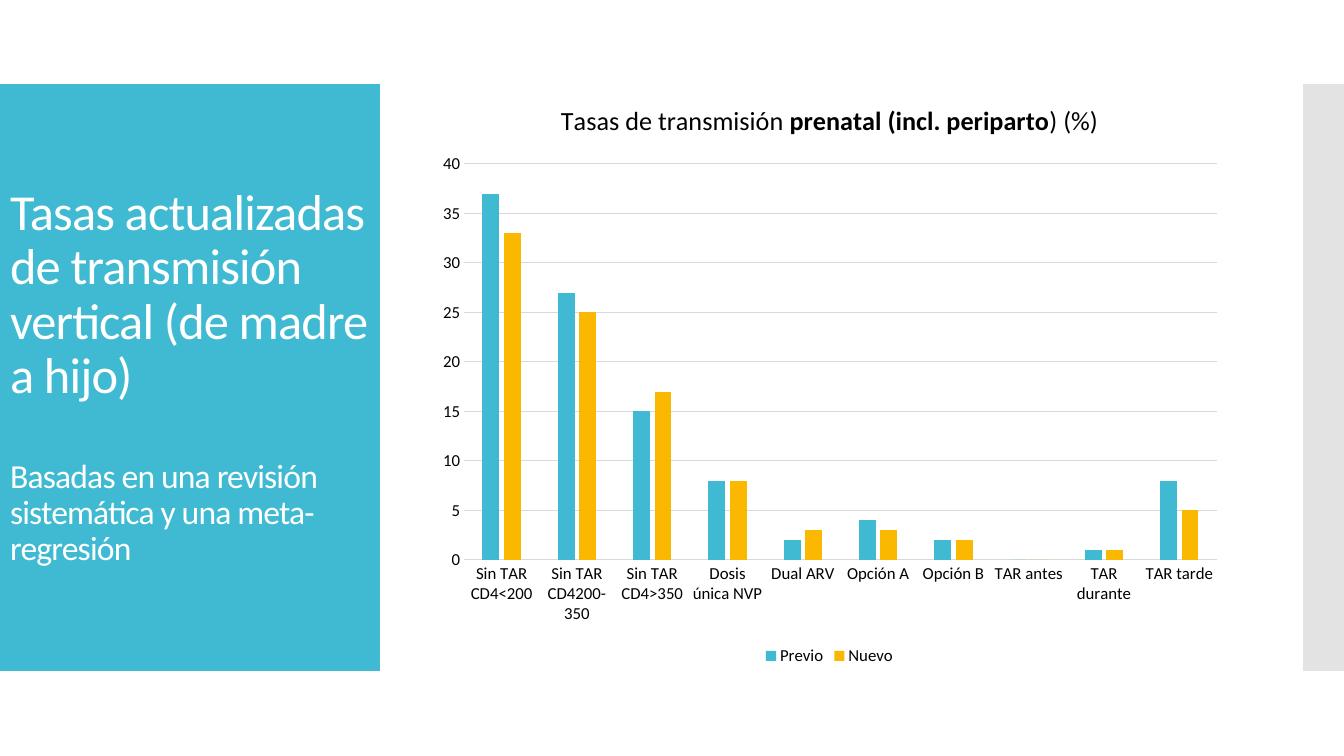
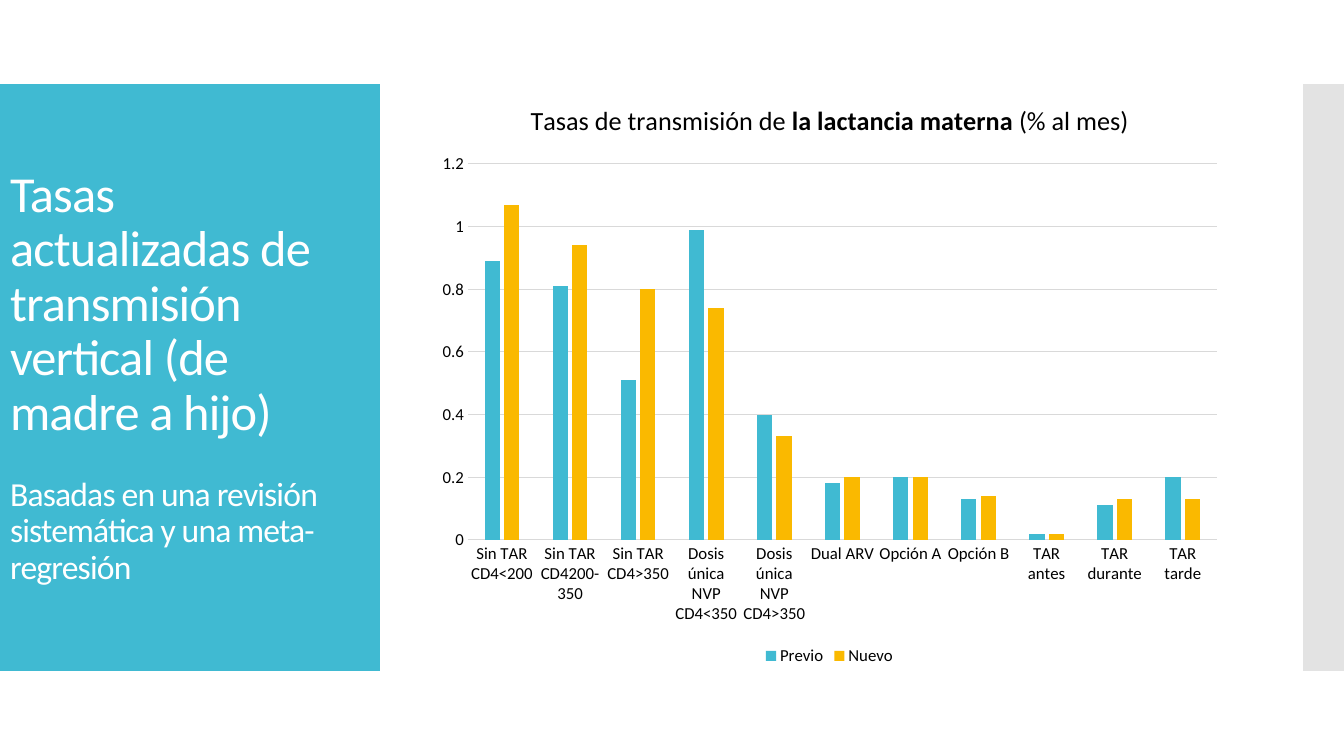
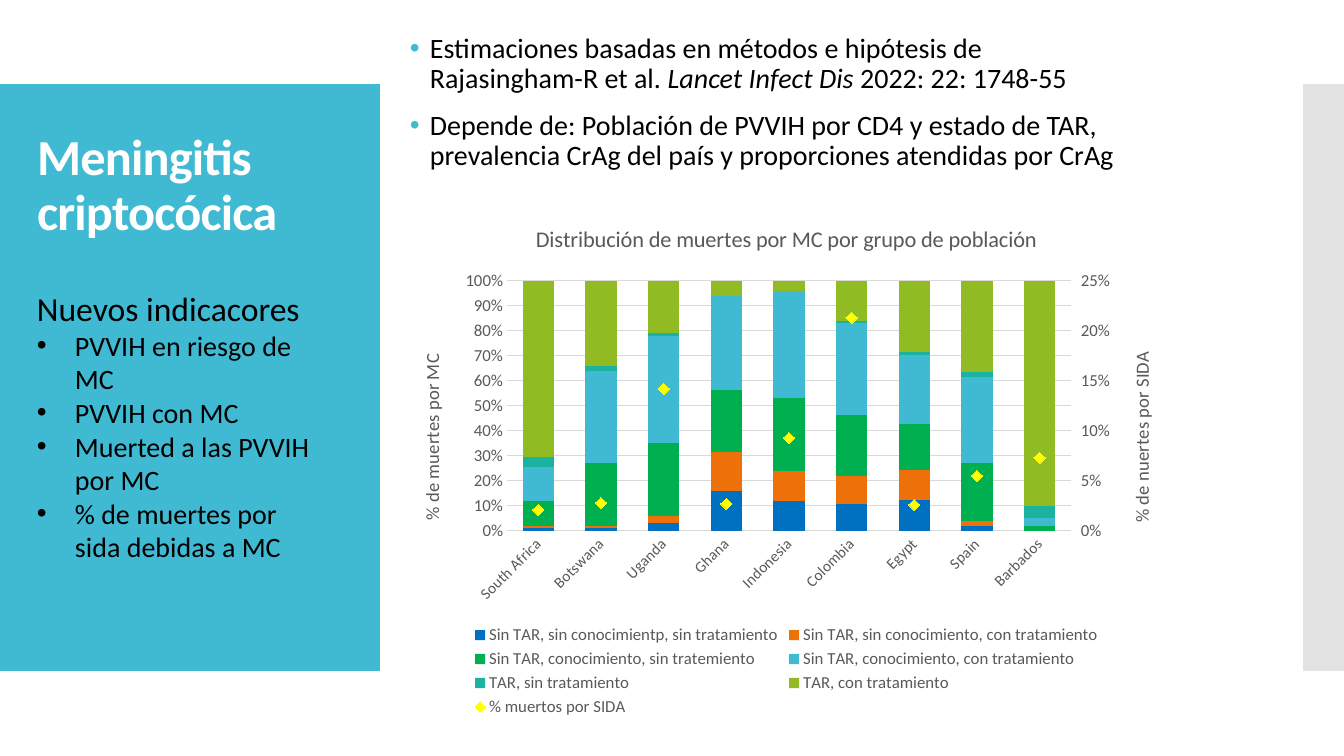
import pptx
import pptx.util
import pptx.oxml
import pptx.oxml.ns
import pptx.dml.color
import pptx.enum.text
import pptx.enum.shapes
import pptx.enum.chart
import pptx.chart.axis
import pptx.chart.data
from lxml import etree

RGB = pptx.dml.color.RGBColor
TEAL = RGB(0x40, 0xBA, 0xD2)
AMBER = RGB(0xFA, 0xB9, 0x00)
SIDE_GRAY = RGB(0xC8, 0xC8, 0xC8)
GRID_GRAY = RGB(0xD9, 0xD9, 0xD9)
TEXT_GRAY = RGB(0x59, 0x59, 0x59)
BLACK = RGB(0, 0, 0)
WHITE = RGB(0xFF, 0xFF, 0xFF)
YELLOW = RGB(0xFF, 0xFF, 0)
STACK_COLORS = [RGB(0x00, 0x70, 0xC0), RGB(0xEE, 0x70, 0x08), RGB(0x00, 0xB0, 0x50),
                TEAL, RGB(0x1A, 0xB3, 0x9F), RGB(0x90, 0xBB, 0x23)]
FONT = "Calibri"
SLIDE_W, SLIDE_H = 1344, 756
PANEL = (0, 84, 380, 587)
SIDE_BAR = (1303, 84, 41, 587)
RATE_CHART = (426, 83, 807, 587)

qn = pptx.oxml.ns.qn
Pt = pptx.util.Pt
CT = pptx.enum.chart.XL_CHART_TYPE
TICK = pptx.enum.chart.XL_TICK_MARK
ANCHOR = pptx.enum.text.MSO_ANCHOR


def px(n):
    return pptx.util.Emu(round(n * 12192000 / SLIDE_W))


def format_font(font, size, color=BLACK, bold=False, italic=False):
    font.name = FONT
    font.size = Pt(size)
    font.bold = bold
    font.italic = italic
    font.color.rgb = color


def add_text(p, text, size, spacing=None, **style):
    for i, line in enumerate(text.split("\n")):
        if i:
            p.add_line_break()
        r = p.add_run()
        r.text = line
        format_font(r.font, size, **style)
        if spacing is not None:
            r.font._element.set("spc", str(spacing))


def set_bullet(p, indent, color):
    pPr = p._p.get_or_add_pPr()
    pPr.set("marL", str(px(indent)))
    pPr.set("indent", str(-px(indent)))
    clr = etree.SubElement(pPr, qn("a:buClr"))
    etree.SubElement(clr, qn("a:srgbClr")).set("val", str(color))
    etree.SubElement(pPr, qn("a:buFont")).set("typeface", "Arial")
    etree.SubElement(pPr, qn("a:buChar")).set("char", "•")


def add_band(s, box, color, alpha=None):
    sp = s.shapes.add_shape(pptx.enum.shapes.MSO_SHAPE.RECTANGLE, *map(px, box))
    sp.shadow.inherit = False
    sp.fill.solid()
    sp.fill.fore_color.rgb = color
    sp.line.fill.background()
    if alpha:
        clr = sp.element.spPr.find(".//" + qn("a:srgbClr"))
        etree.SubElement(clr, qn("a:alpha")).set("val", str(alpha * 1000))
    s.shapes.element.insert(2, sp.element)


def add_slide(prs, title_box, title, subtitle=None, gap=0, bold=False):
    s = prs.slides.add_slide(prs.slide_layouts[5])
    add_band(s, PANEL, TEAL)
    add_band(s, SIDE_BAR, SIDE_GRAY, alpha=50)
    sp = s.shapes.title
    sp.left, sp.top, sp.width, sp.height = map(px, title_box)
    tf = sp.text_frame
    tf.word_wrap = True
    tf.auto_size = pptx.enum.text.MSO_AUTO_SIZE.NONE
    tf.vertical_anchor = ANCHOR.MIDDLE
    add_text(tf.paragraphs[0], title, 36, spacing=-60, color=WHITE, bold=bold)
    if subtitle:
        p = tf.add_paragraph()
        add_text(p, subtitle, 24, spacing=-60, color=WHITE)
        p.space_before = Pt(gap)
    for p in tf.paragraphs:
        p.alignment = pptx.enum.text.PP_ALIGN.LEFT
        p.line_spacing = 0.9
    return s


def add_text_box(s, box, anchor=ANCHOR.TOP):
    tf = s.shapes.add_textbox(*map(px, box)).text_frame
    tf.word_wrap = True
    tf.vertical_anchor = anchor
    return tf


def set_plot_box(chart, box, plot):
    area = chart._chartSpace.chart.plotArea
    for old in area.findall(qn("c:layout")):
        area.remove(old)
    layout = etree.Element(qn("c:layout"))
    manual = etree.SubElement(layout, qn("c:manualLayout"))
    x, y, w, h = box
    shares = [(plot[0] - x) / w, (plot[1] - y) / h, plot[2] / w, plot[3] / h]
    values = [("layoutTarget", "inner"), ("xMode", "edge"), ("yMode", "edge")]
    values += [(k, f"{v:.4f}") for k, v in zip("xywh", shares)]
    for name, value in values:
        etree.SubElement(manual, qn("c:" + name)).set("val", value)
    area.insert(0, layout)


def format_axis(axis, size, color, tick=TICK.NONE, line=False, grid=False,
                title=None, number_format=None, top=None, step=None):
    format_font(axis.tick_labels.font, size, color)
    axis.major_tick_mark = tick
    axis.minor_tick_mark = TICK.NONE
    axis.has_major_gridlines = grid
    lines = [axis.format.line] if line else []
    if grid:
        lines.append(axis.major_gridlines.format.line)
    for ln in lines:
        ln.color.rgb = GRID_GRAY
        ln.width = Pt(0.75)
    if not line:
        axis.format.line.fill.background()
    if title:
        add_text(axis.axis_title.text_frame.paragraphs[0], title, 13.3, color=color)
    if number_format:
        axis.tick_labels.number_format = number_format
        axis.tick_labels.number_format_is_linked = False
    if top:
        axis.minimum_scale = 0
        axis.maximum_scale = top
    if step:
        axis.major_unit = step


def add_column_chart(s, box, plot, kind, cats, series, title, size, color, gap, overlap):
    data = pptx.chart.data.CategoryChartData()
    data.categories = cats
    for name, values in series:
        data.add_series(name, values)
    chart = s.shapes.add_chart(kind, *map(px, box), data).chart
    format_font(chart.font, 10)
    p = chart.chart_title.text_frame.paragraphs[0]
    for text, bold in title:
        add_text(p, text, size, color=color, bold=bold)
    chart.has_legend = True
    chart.legend.position = pptx.enum.chart.XL_LEGEND_POSITION.BOTTOM
    chart.legend.include_in_layout = False
    format_font(chart.legend.font, 12, color)
    bars = chart.plots[0]
    bars.vary_by_categories = False
    bars.gap_width = gap
    bars.overlap = overlap
    set_plot_box(chart, box, plot)
    return chart


def fill_series(plot, colors):
    for ser, color in zip(plot.series, colors):
        ser.format.fill.solid()
        ser.format.fill.fore_color.rgb = color


def rotate_labels(axis, angle):
    axis._element.find(qn("c:txPr")).find(qn("a:bodyPr")).set("rot", str(angle * 60000))


def add_rate_slide(prs, title_width, gap, title, cats, before, after, plot, top, step):
    s = add_slide(prs, (0, 124, title_width, 507),
                  "Tasas actualizadas de transmisión vertical (de madre a hijo)",
                  "Basadas en una revisión sistemática y una meta-regresión", gap)
    chart = add_column_chart(s, RATE_CHART, plot, CT.COLUMN_CLUSTERED, cats,
                             [("Previo", before), ("Nuevo", after)],
                             title, 18.7, BLACK, 219, -27)
    fill_series(chart.plots[0], [TEAL, AMBER])
    format_axis(chart.category_axis, 12, BLACK, line=True)
    rotate_labels(chart.category_axis, -1000)
    format_axis(chart.value_axis, 12, BLACK, grid=True, number_format="General",
                top=top, step=step)


def move_last_series_to_right_axis(chart):
    area = chart._chartSpace.chart.plotArea
    bars = area.find(qn("c:barChart"))
    ser = bars.findall(qn("c:ser"))[-1]
    for el in ser.findall(qn("c:invertIfNegative")):
        ser.remove(el)
    ns = pptx.oxml.ns.nsdecls("c")
    lines = pptx.oxml.parse_xml(
        f'<c:lineChart {ns}><c:grouping val="standard"/><c:varyColors val="0"/>'
        '<c:marker val="1"/><c:axId val="5001"/><c:axId val="5002"/></c:lineChart>')
    lines.insert(2, ser)
    bars.addnext(lines)
    last = area.findall(qn("c:valAx"))[-1]
    axes = [("valAx", 5002, 5001, 0, "r", "max"), ("catAx", 5001, 5002, 1, "b", "autoZero")]
    for tag, own, other, hidden, side, crosses in axes:
        last.addnext(pptx.oxml.parse_xml(
            f'<c:{tag} {ns}><c:axId val="{own}"/>'
            '<c:scaling><c:orientation val="minMax"/></c:scaling>'
            f'<c:delete val="{hidden}"/><c:axPos val="{side}"/>'
            '<c:majorTickMark val="none"/><c:minorTickMark val="none"/>'
            f'<c:tickLblPos val="nextTo"/><c:crossAx val="{other}"/>'
            f'<c:crosses val="{crosses}"/></c:{tag}>'))
    return map(pptx.chart.axis.ValueAxis, area.findall(qn("c:valAx")))


def add_death_chart(s, box):
    cats = ["South Africa", "Botswana", "Uganda", "Ghana", "Indonesia",
            "Colombia", "Egypt", "Spain", "Barbados"]
    unaware = [1, 1, 3, 16, 12, 11, 12, 2, 0]
    series = [
        ("Sin TAR, sin conocimientp, sin tratamiento", unaware),
        ("Sin TAR, sin conocimiento, con tratamiento", unaware),
        ("Sin TAR, conocimiento, sin tratemiento", [10, 25, 29, 25, 29, 25, 18, 23, 2]),
        ("Sin TAR, conocimiento, con tratamiento", [14, 37, 43, 38, 43, 37, 27, 34, 3]),
        ("TAR, sin tratamiento", [4, 2, 1, 0, 0, 1, 1, 2, 5]),
        ("TAR, con tratamiento", [71, 34, 21, 6, 4, 16, 28, 36, 90]),
        ("% muertos por SIDA",
         [0.021, 0.028, 0.142, 0.027, 0.093, 0.213, 0.026, 0.055, 0.073]),
    ]
    x, y, w, h = box
    chart = add_column_chart(
        s, box, (x + 108, y + 77, 564, 250), CT.COLUMN_STACKED_100, cats, series,
        [("Distribución de muertes por MC por grupo de población", False)],
        16, TEXT_GRAY, 100, 100)
    left_axis, right_axis = move_last_series_to_right_axis(chart)
    fill_series(chart.plots[0], STACK_COLORS)
    format_axis(chart.category_axis, 11, TEXT_GRAY, line=True)
    rotate_labels(chart.category_axis, -45)
    format_axis(left_axis, 12, TEXT_GRAY, grid=True, number_format="0%",
                title="% de muertes por MC", step=0.1)
    format_axis(right_axis, 12, TEXT_GRAY, tick=TICK.OUTSIDE, number_format="0%",
                title="% de nuertes por SIDA", top=0.25, step=0.05)
    ser = chart.plots[1].series[0]
    ser.smooth = False
    ser.format.line.fill.background()
    ser.marker.style = pptx.enum.chart.XL_MARKER_STYLE.DIAMOND
    ser.marker.size = 8
    ser.marker.format.fill.solid()
    ser.marker.format.fill.fore_color.rgb = YELLOW
    ser.marker.format.line.fill.background()


def add_method_notes(s, box):
    tf = add_text_box(s, box, ANCHOR.MIDDLE)
    notes = [
        [("Estimaciones basadas en métodos e hipótesis de\nRajasingham-R et al. ", False),
         ("Lancet Infect Dis ", True), ("2022: 22: 1748-55", False)],
        [("Depende de: Población de PVVIH por CD4 y estado de TAR, prevalencia CrAg "
          "del país y proporciones atendidas por CrAg", False)],
    ]
    for i, note in enumerate(notes):
        p = tf.add_paragraph() if i else tf.paragraphs[0]
        set_bullet(p, 20, TEAL)
        p.line_spacing = 0.9
        if i:
            p.space_before = Pt(12)
        for text, italic in note:
            add_text(p, text, 20, italic=italic)


def add_indicators(s, box):
    tf = add_text_box(s, box)
    add_text(tf.paragraphs[0], "Nuevos indicacores", 24)
    for text in ["PVVIH en riesgo de MC", "PVVIH con MC", "Muerted a las PVVIH por MC",
                 "% de muertes por sida debidas a MC"]:
        p = tf.add_paragraph()
        set_bullet(p, 38, BLACK)
        add_text(p, text, 20)


def add_meningitis_slide(prs):
    s = add_slide(prs, (27, 114, 325, 145), "Meningitis criptocócica", bold=True)
    add_method_notes(s, (400, 19, 806, 168))
    add_death_chart(s, (399, 204, 775, 517))
    add_indicators(s, (27, 283, 303, 319))


def main():
    prs = pptx.Presentation()
    prs.slide_width, prs.slide_height = px(SLIDE_W), px(SLIDE_H)
    no_art = ["Sin TAR CD4<200", "Sin TAR CD4200-350", "Sin TAR CD4>350"]
    options = ["Dual ARV", "Opción A", "Opción B", "TAR antes", "TAR durante", "TAR tarde"]
    add_rate_slide(
        prs, 379, 39,
        [("Tasas de transmisión ", False), ("prenatal (incl. periparto", True),
         (") (%)", False)],
        no_art + ["Dosis única NVP"] + options,
        [37, 27, 15, 8, 2, 4, 2, 0, 1, 8],
        [33, 25, 17, 8, 3, 3, 2, 0, 1, 5],
        (464, 164, 753, 396), 40, 5)
    add_rate_slide(
        prs, 372, 26,
        [("Tasas de transmisión de ", False), ("la lactancia materna", True),
         (" (% al mes)", False)],
        no_art + ["Dosis única NVP CD4<350", "Dosis única NVP CD4>350"] + options,
        [0.89, 0.81, 0.51, 0.99, 0.4, 0.18, 0.2, 0.13, 0.02, 0.11, 0.2],
        [1.07, 0.94, 0.8, 0.74, 0.33, 0.2, 0.2, 0.14, 0.02, 0.13, 0.13],
        (468, 164, 749, 376), 1.2, 0.2)
    add_meningitis_slide(prs)
    prs.save("out.pptx")


if __name__ == "__main__":
    main()
